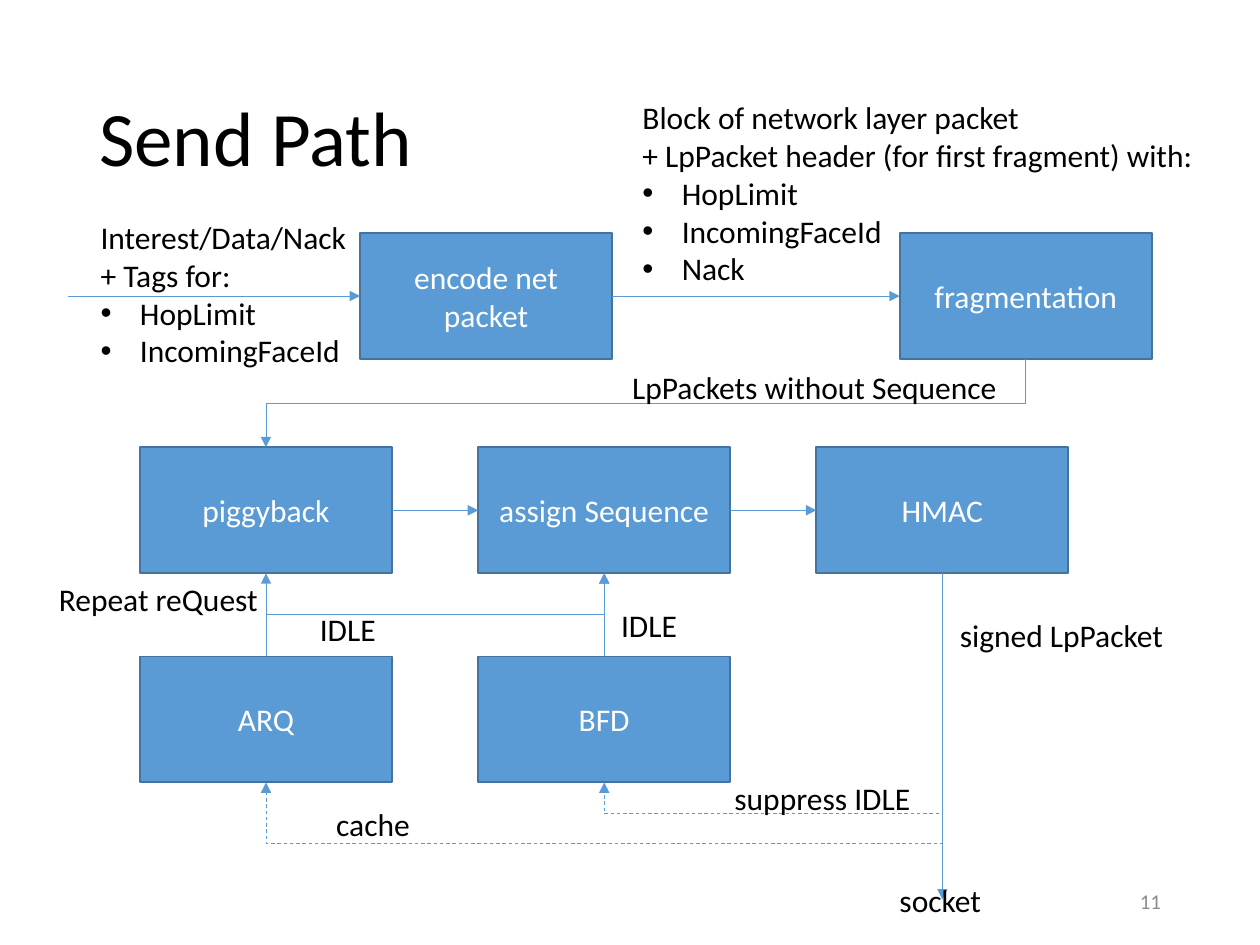
from dataclasses import dataclass

import pptx
import pptx.dml.color
import pptx.enum.dml
import pptx.enum.shapes
import pptx.enum.text
import pptx.oxml
import pptx.oxml.ns
import pptx.util

Pt = pptx.util.Pt
Align = pptx.enum.text.PP_ALIGN
Anchor = pptx.enum.text.MSO_ANCHOR
Connector = pptx.enum.shapes.MSO_CONNECTOR


@dataclass(frozen=True)
class Theme:
    font: str = "Calibri"
    title_size: float = 44
    body_size: float = 18
    number_size: float = 12
    text: str = "000000"
    muted: str = "8C8C8C"
    box_text: str = "FFFFFF"
    box_fill: str = "5B9BD5"
    box_line: str = "43739E"
    arrow: str = "5B9BD5"


THEME = Theme()
BOX_WIDTH, BOX_HEIGHT = 144, 72
COLUMNS = [80 + 193.25 * index for index in range(3)]
TOP_ROW, MIDDLE_ROW, BOTTOM_ROW = 133.2, 255.6, 375.1


def color(value):
    return pptx.dml.color.RGBColor.from_string(value)


def format_text(para, size, ink, align=Align.LEFT):
    para.alignment = align
    para.font.name = THEME.font
    para.font.size = Pt(size)
    para.font.color.rgb = color(ink)


def add_xml(parent, tag, **attributes):
    child = pptx.oxml.parse_xml(f"<a:{tag} {pptx.oxml.ns.nsdecls('a')}/>")
    for name, value in attributes.items():
        child.set(name, str(value))
    parent.append(child)


def add_title(page, text):
    title = page.shapes.title
    title.left, title.top, title.width, title.height = Pt(49.5), Pt(28.8), Pt(621), Pt(104.4)
    title.text_frame.text = text
    title.text_frame.vertical_anchor = Anchor.MIDDLE
    para = title.text_frame.paragraphs[0]
    format_text(para, THEME.title_size, THEME.text)
    para.line_spacing = 0.9


def add_box(page, left, top, text):
    box = page.shapes.add_shape(pptx.enum.shapes.MSO_SHAPE.RECTANGLE,
                                Pt(left), Pt(top), Pt(BOX_WIDTH), Pt(BOX_HEIGHT))
    box.shadow.inherit = False
    box.fill.solid()
    box.fill.fore_color.rgb = color(THEME.box_fill)
    box.line.color.rgb = color(THEME.box_line)
    box.line.width = Pt(1)
    box.text_frame.text = text
    box.text_frame.word_wrap = True
    box.text_frame.vertical_anchor = Anchor.MIDDLE
    format_text(box.text_frame.paragraphs[0], THEME.body_size, THEME.box_text, Align.CENTER)
    return box


def add_label(page, left, top, width, lines, bullets=()):
    """Plain lines followed by bulleted ones, in a box that fits its text."""
    count = len(lines) + len(bullets)
    label = page.shapes.add_textbox(Pt(left), Pt(top), Pt(width), Pt(7.2 + 21.8 * count))
    frame = label.text_frame
    frame.word_wrap = False
    frame.auto_size = pptx.enum.text.MSO_AUTO_SIZE.SHAPE_TO_FIT_TEXT
    frame.text = "\n".join([*lines, *bullets])
    for index, para in enumerate(frame.paragraphs):
        format_text(para, THEME.body_size, THEME.text)
        if index >= len(lines):
            properties = para._p.get_or_add_pPr()
            properties.set("marL", str(Pt(22.5)))
            properties.set("indent", str(-Pt(22.5)))
            add_xml(properties, "buFont", typeface="Arial")
            # The bullet font and character come before default run properties.
            add_xml(properties, "buChar", char="•")
            defaults = properties.find(pptx.oxml.ns.qn("a:defRPr"))
            properties.append(defaults)


def add_page_number(page, text):
    box = page.shapes.add_textbox(Pt(508.5), Pt(500.5), Pt(162), Pt(28.8))
    box.text_frame.word_wrap = True
    box.text_frame.vertical_anchor = Anchor.MIDDLE
    box.text_frame.text = text
    format_text(box.text_frame.paragraphs[0], THEME.number_size, THEME.muted, Align.RIGHT)


def port(box, side):
    """Middle of one side of a box, in points."""
    across, down = {"left": (0, 0.5), "right": (1, 0.5),
                    "top": (0.5, 0), "bottom": (0.5, 1)}[side]
    return box.left.pt + across * BOX_WIDTH, box.top.pt + down * BOX_HEIGHT


def finish_arrow(connector, dashed=False):
    connector.line.color.rgb = color(THEME.arrow)
    connector.line.width = Pt(0.5)
    if dashed:
        connector.line.dash_style = pptx.enum.dml.MSO_LINE.DASH
    properties = connector._element.spPr
    add_xml(properties.find(pptx.oxml.ns.qn("a:ln")), "tailEnd", type="triangle")
    add_xml(properties, "effectLst")


def add_arrow(page, start, end):
    connector = page.shapes.add_connector(Connector.STRAIGHT, *map(Pt, (*start, *end)))
    finish_arrow(connector)


def add_elbow(page, start, end, bend=0.5, dashed=False):
    """Elbow that leaves vertically: a horizontal one turned by 90 degrees."""
    (x1, y1), (x2, y2) = start, end
    center_x, center_y = (x1 + x2) / 2, (y1 + y2) / 2
    half_x, half_y = (x2 - x1) / 2, (y2 - y1) / 2
    connector = page.shapes.add_connector(
        Connector.ELBOW, Pt(center_x - half_y), Pt(center_y + half_x),
        Pt(center_x + half_y), Pt(center_y - half_x))
    properties = connector._element.spPr
    properties.find(pptx.oxml.ns.qn("a:xfrm")).set("rot", str(90 * 60000))
    geometry = properties.find(pptx.oxml.ns.qn("a:prstGeom"))
    add_xml(geometry.get_or_add_avLst(), "gd", name="adj1", fmla=f"val {round(bend * 100000)}")
    finish_arrow(connector, dashed)


def main():
    deck = pptx.Presentation()
    deck.slide_width, deck.slide_height = Pt(720), Pt(540)
    page = deck.slides.add_slide(deck.slide_layouts[5])
    add_title(page, "Send Path")
    add_page_number(page, "11")

    # Processing steps
    encode = add_box(page, 205.8, TOP_ROW, "encode net packet")
    fragmentation = add_box(page, 514.2, TOP_ROW, "fragmentation")
    piggyback, sequence, hmac = [
        add_box(page, left, MIDDLE_ROW, text)
        for left, text in zip(COLUMNS, ("piggyback", "assign Sequence", "HMAC"))]
    arq, bfd = [add_box(page, left, BOTTOM_ROW, text)
                for left, text in zip(COLUMNS, ("ARQ", "BFD"))]

    # Straight flow
    entry_x, entry_y = port(encode, "left")
    add_arrow(page, (entry_x - 167, entry_y), (entry_x, entry_y))
    for source, target in ((encode, fragmentation), (piggyback, sequence), (sequence, hmac)):
        add_arrow(page, port(source, "right"), port(target, "left"))
    for source, target in ((arq, piggyback), (bfd, sequence)):
        add_arrow(page, port(source, "top"), port(target, "bottom"))
    exit_x, exit_y = port(hmac, "bottom")
    add_arrow(page, (exit_x, exit_y), (exit_x, 514))

    # Bent flow and feedback
    add_elbow(page, port(fragmentation, "bottom"), port(piggyback, "top"))
    add_elbow(page, port(arq, "top"), port(sequence, "bottom"))
    for target, bend in ((bfd, 1.15), (arq, 1.29)):
        add_elbow(page, port(hmac, "bottom"), port(target, "bottom"), bend, dashed=True)

    # Labels
    tags = ["HopLimit", "IncomingFaceId"]
    add_label(page, 50.4, 121, 156.2, ["Interest/Data/Nack", "+ Tags for:"], tags)
    add_label(page, 360, 52.6, 332.6,
              ["Block of network layer packet", "+ LpPacket header (for first fragment) with:"],
              [*tags, "Nack"])
    for left, top, width, text in (
            (354.2, 206.6, 224, "LpPackets without Sequence"),
            (26.6, 327.6, 129.6, "Repeat reQuest"),
            (506.9, 499.7, 62, "socket"),
            (347.8, 342.7, 46.8, "IDLE"),
            (175.7, 344.9, 46.8, "IDLE"),
            (185, 456.5, 56.9, "cache"),
            (541.4, 348.5, 131.8, "signed LpPacket"),
            (412.6, 441.4, 116, "suppress IDLE")):
        add_label(page, left, top, width, [text])

    deck.save("out.pptx")


if __name__ == "__main__":
    main()
